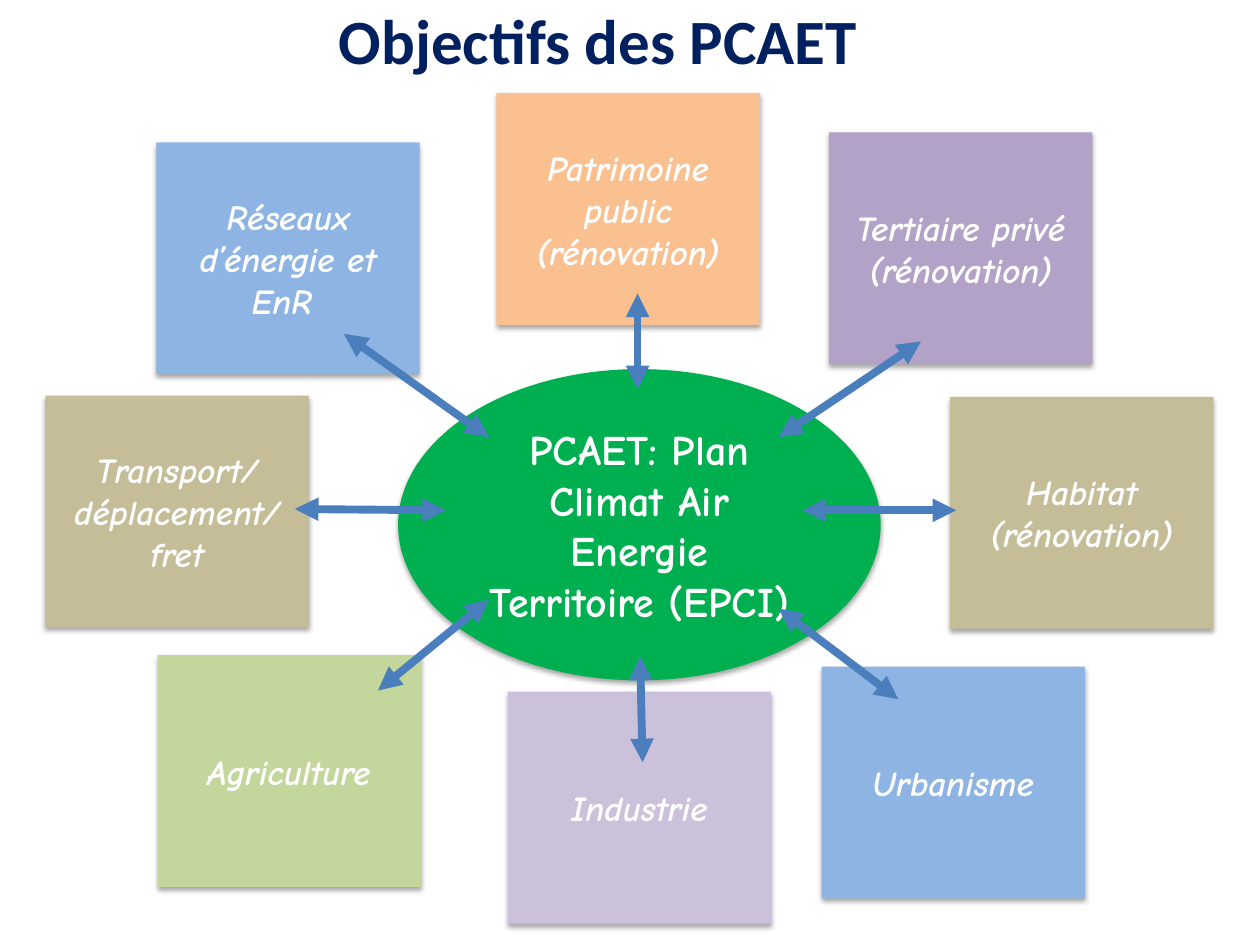
from dataclasses import dataclass

from lxml.etree import SubElement
from pptx import Presentation
from pptx.dml.color import RGBColor
from pptx.enum.shapes import MSO_CONNECTOR as Connector, MSO_SHAPE as Shape
from pptx.enum.text import MSO_ANCHOR as Anchor, PP_ALIGN as Align
from pptx.oxml.ns import qn
from pptx.util import Inches, Pt

COLUMNS, ROWS = 100, 75
SLIDE_WIDTH, SLIDE_HEIGHT = Inches(10), Inches(7.5)
BOX_COLUMNS, BOX_ROWS = 20.9, 18.4

WHITE = RGBColor(0xFF, 0xFF, 0xFF)
NAVY = RGBColor(0x00, 0x20, 0x60)
GREEN = RGBColor(0x00, 0xB0, 0x50)
LIME = RGBColor(0xC3, 0xD6, 0x9B)
TAN = RGBColor(0xC4, 0xBD, 0x97)
LILAC = RGBColor(0xCC, 0xC1, 0xDA)
PURPLE = RGBColor(0xB3, 0xA2, 0xC7)
SKY = RGBColor(0x8E, 0xB4, 0xE3)
ORANGE = RGBColor(0xFA, 0xC0, 0x90)
ARROW_BLUE = RGBColor(0x4B, 0x7E, 0xBC)


@dataclass(frozen=True)
class Node:
    """A labelled shape placed on the slide grid."""

    text: str
    column: float
    row: float
    color: RGBColor
    columns: float = BOX_COLUMNS
    rows: float = BOX_ROWS
    kind: Shape = Shape.RECTANGLE
    size: int = 20
    italic: bool = True


@dataclass(frozen=True)
class Arrow:
    """A double-headed arrow between two grid points."""

    start: tuple[float, float]
    end: tuple[float, float]


PLAN = Node("PCAET: Plan Climat Air Energie Territoire (EPCI)", 31.6, 29.3, GREEN,
            38.3, 24.7, Shape.OVAL, 24, False)
SECTORS = [
    Node("Agriculture", 12.5, 52, LIME),
    Node("Transport/\vdéplacement/\nfret", 3.6, 31.4, TAN),
    Node("Industrie", 40.3, 54.9, LILAC),
    Node("Urbanisme", 65.2, 52.9, SKY),
    Node("Habitat (rénovation)", 75.4, 31.5, TAN),
    Node("Patrimoine public (rénovation)", 39.4, 7.4, ORANGE),
    Node("Réseaux d’énergie et EnR ", 12.4, 11.3, SKY),
    Node("Tertiaire privé (rénovation)", 65.8, 10.5, PURPLE),
]
ARROWS = [
    Arrow((35.4, 40.5), (23.4, 40.4)),
    Arrow((30, 54.8), (38.8, 47.6)),
    Arrow((61.8, 48.3), (71.3, 55.5)),
    Arrow((50.8, 52.1), (51, 60.5)),
    Arrow((63.7, 40.5), (75.9, 40.5)),
    Arrow((27.3, 26.5), (38.8, 34.7)),
    Arrow((50.6, 23.3), (50.6, 30.9)),
    Arrow((73.1, 27.1), (61.8, 34.7)),
]


def across(columns: float) -> int:
    """Convert grid columns to a length."""
    return round(SLIDE_WIDTH * columns / COLUMNS)


def down(rows: float) -> int:
    """Convert grid rows to a length."""
    return round(SLIDE_HEIGHT * rows / ROWS)


def write_text(shape, text: str, font_name: str, size: int, color: RGBColor,
               italic: bool = False) -> None:
    """Write centred bold text into a shape."""
    frame = shape.text_frame
    frame.word_wrap = True
    frame.text = text
    for paragraph in frame.paragraphs:
        paragraph.alignment = Align.CENTER
        font = paragraph.font
        font.name, font.size, font.bold, font.italic = font_name, Pt(size), True, italic
        font.color.rgb = color


def add_shadow(shape) -> None:
    """Give a shape a soft shadow below it."""
    shape.shadow.inherit = False
    effects = shape._element.spPr.find(qn("a:effectLst"))
    shadow = SubElement(effects, qn("a:outerShdw"), blurRad=str(Pt(3.1)),
                        dist=str(Pt(1.8)), dir="5400000", rotWithShape="0")
    color = SubElement(shadow, qn("a:srgbClr"), val="000000")
    SubElement(color, qn("a:alpha"), val="35000")


def add_node(slide, node: Node) -> None:
    """Draw one labelled shape."""
    shape = slide.shapes.add_shape(node.kind, across(node.column), down(node.row),
                                   across(node.columns), down(node.rows))
    shape.fill.solid()
    shape.fill.fore_color.rgb = node.color
    shape.line.fill.background()
    add_shadow(shape)
    shape.text_frame.vertical_anchor = Anchor.MIDDLE
    write_text(shape, node.text, "Comic Neue", node.size, WHITE, node.italic)


def add_arrow(slide, arrow: Arrow) -> None:
    """Draw one double-headed arrow."""
    (start_column, start_row), (end_column, end_row) = arrow.start, arrow.end
    connector = slide.shapes.add_connector(
        Connector.STRAIGHT, across(start_column), down(start_row),
        across(end_column), down(end_row))
    connector.line.color.rgb = ARROW_BLUE
    connector.line.width = Pt(4.5)
    outline = connector.line._get_or_add_ln()
    for end in ("a:headEnd", "a:tailEnd"):
        SubElement(outline, qn(end), type="triangle")
    SubElement(connector._element.spPr, qn("a:effectLst"))


def add_title(slide, text: str) -> None:
    """Draw the slide title."""
    title = slide.shapes.add_textbox(across(14.6), down(-0.4), across(65.7), down(7.4))
    write_text(title, text, "Calibri", 36, NAVY)


def main() -> None:
    """Build and save the slide."""
    presentation = Presentation()
    presentation.slide_width, presentation.slide_height = SLIDE_WIDTH, SLIDE_HEIGHT
    slide = presentation.slides.add_slide(presentation.slide_layouts[6])
    add_title(slide, "Objectifs des PCAET")
    for node in (PLAN, *SECTORS):
        add_node(slide, node)
    for arrow in ARROWS:
        add_arrow(slide, arrow)
    presentation.save("out.pptx")


if __name__ == "__main__":
    main()
